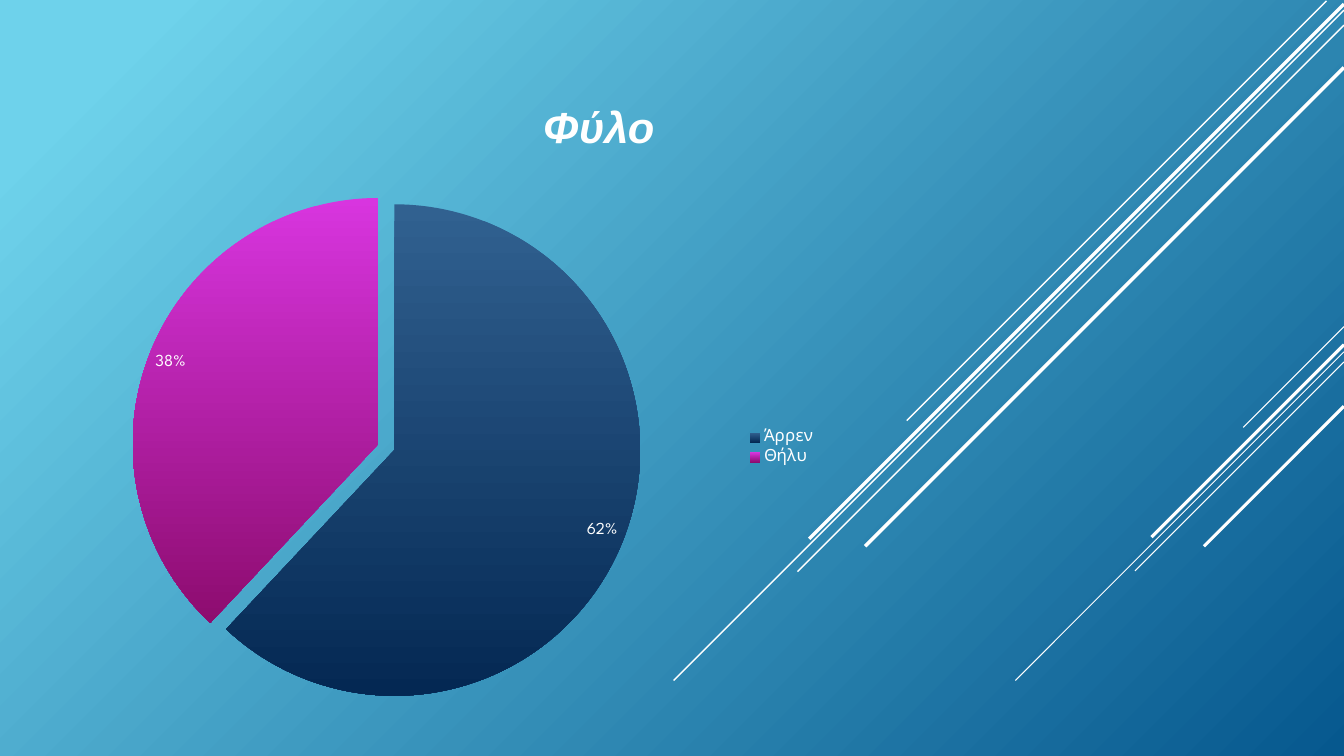
from lxml import etree
from pptx import Presentation
from pptx.chart import data
from pptx.dml import color
from pptx.enum import chart as ce, shapes, text
from pptx.oxml import ns
from pptx.util import Pt

HUES = {
    "white": "FFFFFF",
    "sky": "6ED2EB",
    "sea": "06588E",
    "steel": "316190",
    "navy": "042853",
    "pink": "D835DF",
    "plum": "8D0C6F",
}
RAYS = [
    (960, 233.3, 72, 0.75),
    (960, 251.3, 234.7, 0.75),
    (960, 258.5, 149.3, 0.75),
    (960, 246.2, 137.5, 2.25),
    (960, 290.2, 100, 2.25),
    (947.5, 0.7, 299.8, 1),
    (960, 7.2, 478.8, 1),
    (960, 18, 390.3, 1),
    (960, 2.9, 382, 2.5),
    (960, 48.2, 342, 2.5),
]
SEXES = [("Άρρεν", 62, "steel", "navy"), ("Θήλυ", 38, "pink", "plum")]


def hue(name):
    return color.RGBColor.from_string(HUES[name])


def blend(fill, first, last, turn, start=0):
    fill.gradient()
    fill.gradient_angle = 360 - turn
    for stop, name, place in zip(fill.gradient_stops, (first, last), (start, 1)):
        stop.color.rgb = hue(name)
        stop.position = place


def style(font, face, size):
    font.name = face
    font.size = Pt(size)
    font.color.rgb = hue("white")


def add_ray(slide, right, top, reach, width):
    ray = slide.shapes.add_connector(
        shapes.MSO_CONNECTOR.STRAIGHT,
        Pt(right), Pt(top), Pt(right - reach), Pt(top + reach))
    ray.line.color.rgb = hue("white")
    ray.line.width = Pt(width)
    etree.SubElement(ray._element.spPr, ns.qn("a:effectLst"))


def add_title(slide, words):
    frame = slide.shapes.add_textbox(Pt(92.2), Pt(22.3), Pt(671), Pt(90)).text_frame
    frame.word_wrap = True
    frame.vertical_anchor = text.MSO_ANCHOR.BOTTOM
    para = frame.paragraphs[0]
    para.alignment = text.PP_ALIGN.CENTER
    run = para.add_run()
    run.text = words
    style(run.font, "Arial", 31)
    run.font.bold = run.font.italic = True


def explode(series, index, amount):
    spot = series._element.findall(ns.qn("c:dPt"))[index]
    push = etree.Element(ns.qn("c:explosion"), val=str(amount))
    spot.find(ns.qn("c:spPr")).addprevious(push)


def place_plot(chart, left, top, width, height):
    area = chart._chartSpace.chart.plotArea
    old = area.find(ns.qn("c:layout"))
    if old is not None:
        area.remove(old)
    layout = etree.Element(ns.qn("c:layout"))
    area.insert(0, layout)
    manual = etree.SubElement(layout, ns.qn("c:manualLayout"))
    parts = {"layoutTarget": "inner", "xMode": "edge", "yMode": "edge",
             "x": left, "y": top, "w": width, "h": height}
    for name, value in parts.items():
        etree.SubElement(manual, ns.qn("c:" + name), val=str(value))


def add_pie(slide):
    names, counts = zip(*[row[:2] for row in SEXES])
    table = data.CategoryChartData()
    table.categories = names
    table.add_series("Series 1", counts)
    chart = slide.shapes.add_chart(
        ce.XL_CHART_TYPE.PIE, Pt(33.8), Pt(133.9), Pt(557.3), Pt(371.5), table).chart
    chart.has_title = False
    style(chart.font, "League Spartan", 10)
    chart.has_legend = True
    chart.legend.position = ce.XL_LEGEND_POSITION.RIGHT
    chart.legend.include_in_layout = False
    style(chart.legend.font, "League Spartan", 12)
    plot = chart.plots[0]
    plot.vary_by_categories = True
    series = plot.series[0]
    for index, (_, _, first, last) in enumerate(SEXES):
        form = series.points[index].format
        blend(form.fill, first, last, 90)
        form.line.fill.background()
    explode(series, 1, 7)
    labels = series.data_labels
    labels.show_percentage = True
    labels.show_value = False
    labels.number_format = "0%"
    labels.number_format_is_linked = False
    labels.position = ce.XL_LABEL_POSITION.INSIDE_END
    style(labels.font, "League Spartan", 12)
    place_plot(chart, 0.13, 0.03, 0.63, 0.95)


def main():
    deck = Presentation()
    deck.slide_width, deck.slide_height = Pt(960), Pt(540)
    slide = deck.slides.add_slide(deck.slide_layouts[6])
    blend(slide.background.fill, "sky", "sea", 45, 0.08)
    for ray in RAYS:
        add_ray(slide, *ray)
    add_pie(slide)
    add_title(slide, "Φύλο")
    deck.save("out.pptx")


if __name__ == "__main__":
    main()
